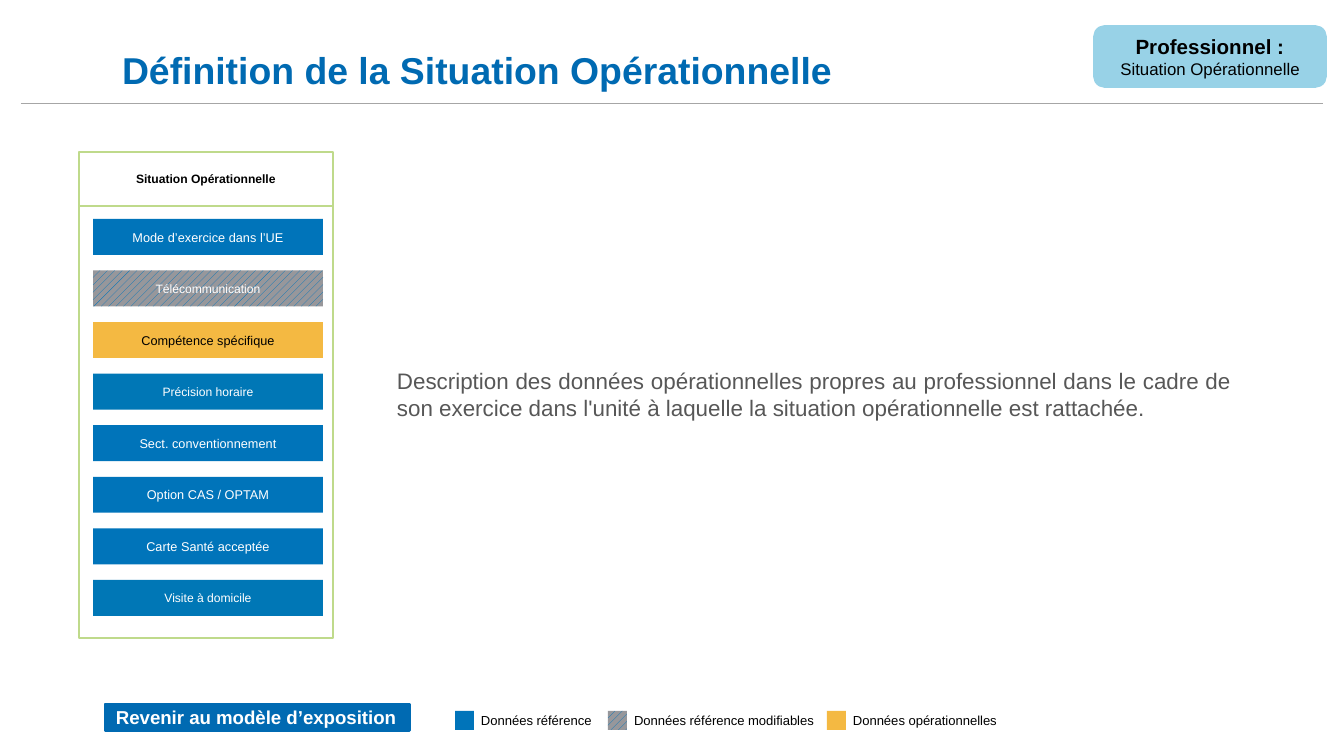
from lxml import etree
from pptx import Presentation
from pptx import util as u
from pptx.dml.color import RGBColor
from pptx.enum import dml, shapes, text
from pptx.oxml.ns import qn

THEME = {
    "font": "Arial",
    "colors": {
        "title": "006AB2", "reference": "0074BA", "reference_alt": "0077B6",
        "operational": "F4B942", "hatch": "97979B", "tag": "98D2E7",
        "frame": "BFDA8B", "rule": "A6A6A6", "body": "575757",
        "black": "000000", "white": "FFFFFF",
    },
    "sizes": {"title": 20, "body": 12, "tag": 11, "tag_sub": 9, "button": 10,
              "legend": 7, "item": 6.8, "item_small": 6.5},
}
COLORS, SIZES = THEME["colors"], THEME["sizes"]

TITLE = "Définition de la Situation Opérationnelle"
TAG = [("Professionnel :", "tag", True), ("Situation Opérationnelle", "tag_sub", False)]
DESCRIPTION = ("Description des données opérationnelles propres au professionnel dans le cadre de "
               "son exercice dans l'unité à laquelle la situation opérationnelle est rattachée.")
CARD_HEADING = "Situation Opérationnelle"
CARD_ITEMS = [
    ("Mode d’exercice dans l’UE", "reference", "item"),
    ("Télécommunication", "modifiable", "item_small"),
    ("Compétence spécifique", "operational", "item"),
    ("Précision horaire", "reference_alt", "item_small"),
    ("Sect. conventionnement", "reference", "item"),
    ("Option CAS / OPTAM", "reference", "item"),
    ("Carte Santé acceptée", "reference", "item"),
    ("Visite à domicile", "reference_alt", "item_small"),
]
BUTTON = "Revenir au modèle d’exposition"
LEGEND = [
    (455, 155, "Données référence", "reference"),
    (608, 215, "Données référence modifiables", "modifiable"),
    (827, 200, "Données opérationnelles", "operational"),
]

CARD = (79, 152, 254)
HEADING_HEIGHT, CARD_BODY_HEIGHT = 54, 432
ITEM_LEFT, ITEM_WIDTH, ITEM_HEIGHT = 93, 230, 36
FIRST_ITEM_TOP, LAST_ITEM_TOP = 219, 580
LEGEND_TOP, SWATCH, LABEL_GAP = 711, 19, 26


def px(value):
    return u.Emu(round(value * 914400 / 134.4))


def rgb(name):
    return RGBColor.from_string(COLORS[name])


def paint(fill, color):
    if color is None:
        fill.background()
    elif color == "modifiable":
        fill.patterned()
        fill.pattern = dml.MSO_PATTERN.WIDE_UPWARD_DIAGONAL
        fill.fore_color.rgb = rgb("reference")
        fill.back_color.rgb = rgb("hatch")
    else:
        fill.solid()
        fill.fore_color.rgb = rgb(color)


def write(frame, lines, color, align=text.PP_ALIGN.LEFT, inset=0,
          anchor=text.MSO_ANCHOR.MIDDLE, wrap=True):
    frame.word_wrap = wrap
    frame.auto_size = text.MSO_AUTO_SIZE.NONE
    frame.vertical_anchor = anchor
    frame.margin_left = frame.margin_right = px(inset)
    frame.margin_top = frame.margin_bottom = 0
    for index, (words, size, bold) in enumerate(lines):
        paragraph = frame.add_paragraph() if index else frame.paragraphs[0]
        paragraph.text = words
        paragraph.alignment = align
        paragraph.font.name = THEME["font"]
        paragraph.font.size = u.Pt(SIZES[size])
        paragraph.font.bold = bold
        paragraph.font.color.rgb = rgb(color)


def add_box(slide, bounds, fill=None, line=None, width=0.75, kind=shapes.MSO_SHAPE.RECTANGLE):
    box = slide.shapes.add_shape(kind, *map(px, bounds))
    box.shadow.inherit = False
    paint(box.fill, fill)
    if line:
        box.line.color.rgb = rgb(line)
        box.line.width = u.Pt(width)
    else:
        box.line.fill.background()
    return box


def add_header(slide):
    rule = slide.shapes.add_connector(shapes.MSO_CONNECTOR.STRAIGHT, *map(px, (21, 103, 1323, 103)))
    rule.line.color.rgb = rgb("rule")
    rule.line.width = u.Pt(0.25)
    etree.SubElement(rule._element.spPr, qn("a:effectLst"))
    title = slide.shapes.title
    title.left, title.top, title.width, title.height = map(px, (122, 13, 1185, 79))
    write(title.text_frame, [(TITLE, "title", True)], "title", anchor=text.MSO_ANCHOR.BOTTOM)
    title.text_frame.paragraphs[0].line_spacing = u.Pt(22)
    tag = add_box(slide, (1095, 27, 230, 59), "tag", "tag", 2, shapes.MSO_SHAPE.ROUNDED_RECTANGLE)
    write(tag.text_frame, TAG, "black", text.PP_ALIGN.CENTER)


def add_card(slide):
    left, top, width = CARD
    heading = add_box(slide, (left, top, width, HEADING_HEIGHT), line="frame")
    write(heading.text_frame, [(CARD_HEADING, "item_small", True)], "black", text.PP_ALIGN.CENTER)
    add_box(slide, (left, top + HEADING_HEIGHT, width, CARD_BODY_HEIGHT), line="frame")
    pitch = (LAST_ITEM_TOP - FIRST_ITEM_TOP) / (len(CARD_ITEMS) - 1)
    for row, (label, category, size) in enumerate(CARD_ITEMS):
        item = add_box(slide, (ITEM_LEFT, FIRST_ITEM_TOP + row * pitch, ITEM_WIDTH, ITEM_HEIGHT), category)
        color = "black" if category == "operational" else "white"
        write(item.text_frame, [(label, size, False)], color, text.PP_ALIGN.CENTER, 4)


def add_description(slide):
    description = slide.shapes.add_textbox(*map(px, (386, 220, 857, 348)))
    write(description.text_frame, [(DESCRIPTION, "body", False)], "body", text.PP_ALIGN.JUSTIFY, 11)


def add_footer(slide):
    button = add_box(slide, (105, 704, 305, 27), "title", "title", 1.5)
    write(button.text_frame, [(BUTTON, "button", True)], "white", inset=11)
    for left, width, label, category in LEGEND:
        add_box(slide, (left, LEGEND_TOP, SWATCH, SWATCH), category)
        caption = slide.shapes.add_textbox(*map(px, (left + LABEL_GAP, LEGEND_TOP, width, SWATCH)))
        write(caption.text_frame, [(label, "legend", False)], "black", wrap=False)


def main():
    deck = Presentation()
    deck.slide_width, deck.slide_height = px(1344), px(756)
    slide = deck.slides.add_slide(deck.slide_layouts[5])
    add_header(slide)
    add_description(slide)
    add_card(slide)
    add_footer(slide)
    deck.save("out.pptx")


if __name__ == "__main__":
    main()
